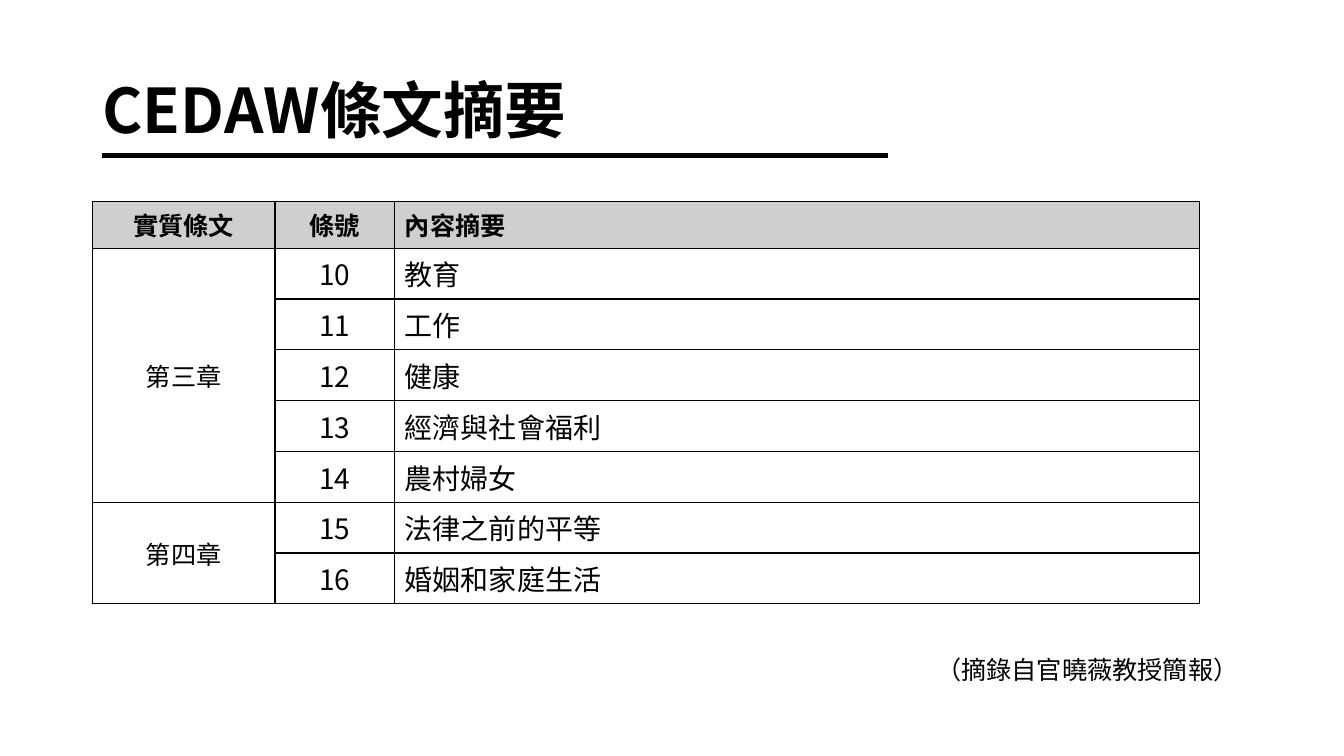
from lxml import etree
from pptx import Presentation
from pptx import util as u
from pptx.dml.color import RGBColor
from pptx.enum import shapes, text
from pptx.oxml import parse_xml
from pptx.oxml.ns import nsdecls, qn

FONT = "Noto Sans CJK SC"
COLORS = {"ink": "000000", "header": "D0CECE"}
HEADINGS = ("實質條文", "條號", "內容摘要")
CHAPTERS = {
    "第三章": ("教育", "工作", "健康", "經濟與社會福利", "農村婦女"),
    "第四章": ("法律之前的平等", "婚姻和家庭生活"),
}
FIRST_ARTICLE = 10
COLUMN_WIDTHS = (4.6, 3.02, 20.27)
HEADER_HEIGHT, ROW_HEIGHT = 1.16, 1.28


def rgb(name):
    return RGBColor.from_string(COLORS[name])


def write(tf, content, size=18, bold=False, align=text.PP_ALIGN.LEFT, spacing=None):
    p = tf.paragraphs[0]
    p.alignment = align
    p.line_spacing = spacing
    r = p.add_run()
    r.text = content
    r.font.size = u.Pt(size)
    r.font.bold = bold
    r.font.color.rgb = rgb("ink")
    r.font.name = FONT
    etree.SubElement(r.font._element, qn("a:ea"), typeface=FONT)


def add_title(s, content):
    sp = s.shapes.title
    sp.left, sp.top, sp.width, sp.height = u.Cm(2.33), u.Cm(1.01), u.Cm(29.21), u.Cm(3.68)
    tf = sp.text_frame
    tf.auto_size = text.MSO_AUTO_SIZE.NONE
    tf.vertical_anchor = text.MSO_ANCHOR.MIDDLE
    write(tf, content, size=44, bold=True, spacing=0.9)


def add_rule(s, left, right, y):
    line = s.shapes.add_connector(
        shapes.MSO_CONNECTOR.STRAIGHT, u.Cm(left), u.Cm(y), u.Cm(right), u.Cm(y))
    line.line.color.rgb = rgb("ink")
    line.line.width = u.Pt(3)
    etree.SubElement(line._element.spPr, qn("a:effectLst"))


def add_borders(cell):
    tc_pr = cell._tc.get_or_add_tcPr()
    for i, side in enumerate("LRTB"):
        tc_pr.insert(i, parse_xml(
            f'<a:ln{side} {nsdecls("a")} w="{u.Pt(1)}"><a:solidFill>'
            f'<a:srgbClr val="{COLORS["ink"]}"/></a:solidFill></a:ln{side}>'))


def fill_cell(cell, content, **fmt):
    cell.vertical_anchor = text.MSO_ANCHOR.MIDDLE
    write(cell.text_frame, content, **fmt)


def add_articles_table(s):
    row_count = 1 + sum(map(len, CHAPTERS.values()))
    height = HEADER_HEIGHT + ROW_HEIGHT * (row_count - 1)
    table = s.shapes.add_table(
        row_count, len(HEADINGS), u.Cm(2.33), u.Cm(5.08),
        u.Cm(sum(COLUMN_WIDTHS)), u.Cm(height)).table
    for column, width in zip(table.columns, COLUMN_WIDTHS):
        column.width = u.Cm(width)
    for i, row in enumerate(table.rows):
        row.height = u.Cm(ROW_HEIGHT if i else HEADER_HEIGHT)
        for cell in row.cells:
            if i:
                cell.fill.background()
            else:
                cell.fill.solid()
                cell.fill.fore_color.rgb = rgb("header")
            add_borders(cell)

    center, left = text.PP_ALIGN.CENTER, text.PP_ALIGN.LEFT
    for cell, heading, align in zip(table.rows[0].cells, HEADINGS, (center, center, left)):
        fill_cell(cell, heading, bold=True, align=align)
    row = 1
    for chapter, summaries in CHAPTERS.items():
        table.cell(row, 0).merge(table.cell(row + len(summaries) - 1, 0))
        fill_cell(table.cell(row, 0), chapter, align=center)
        for summary in summaries:
            fill_cell(table.cell(row, 1), str(FIRST_ARTICLE + row - 1), size=20, align=center)
            fill_cell(table.cell(row, 2), summary, size=20)
            row += 1


def add_credit(s, content):
    sp = s.shapes.add_textbox(u.Cm(23.34), u.Cm(16.36), u.Cm(8.2), u.Cm(1.02))
    sp.text_frame.word_wrap = False
    write(sp.text_frame, content)


def main():
    prs = Presentation()
    prs.slide_width, prs.slide_height = u.Cm(33.87), u.Cm(19.05)
    s = prs.slides.add_slide(prs.slide_layouts.get_by_name("Title Only"))
    add_rule(s, 2.58, 22.38, 3.92)
    add_title(s, "CEDAW條文摘要")
    add_articles_table(s)
    add_credit(s, "（摘錄自官曉薇教授簡報）")
    prs.save("out.pptx")


if __name__ == "__main__":
    main()
